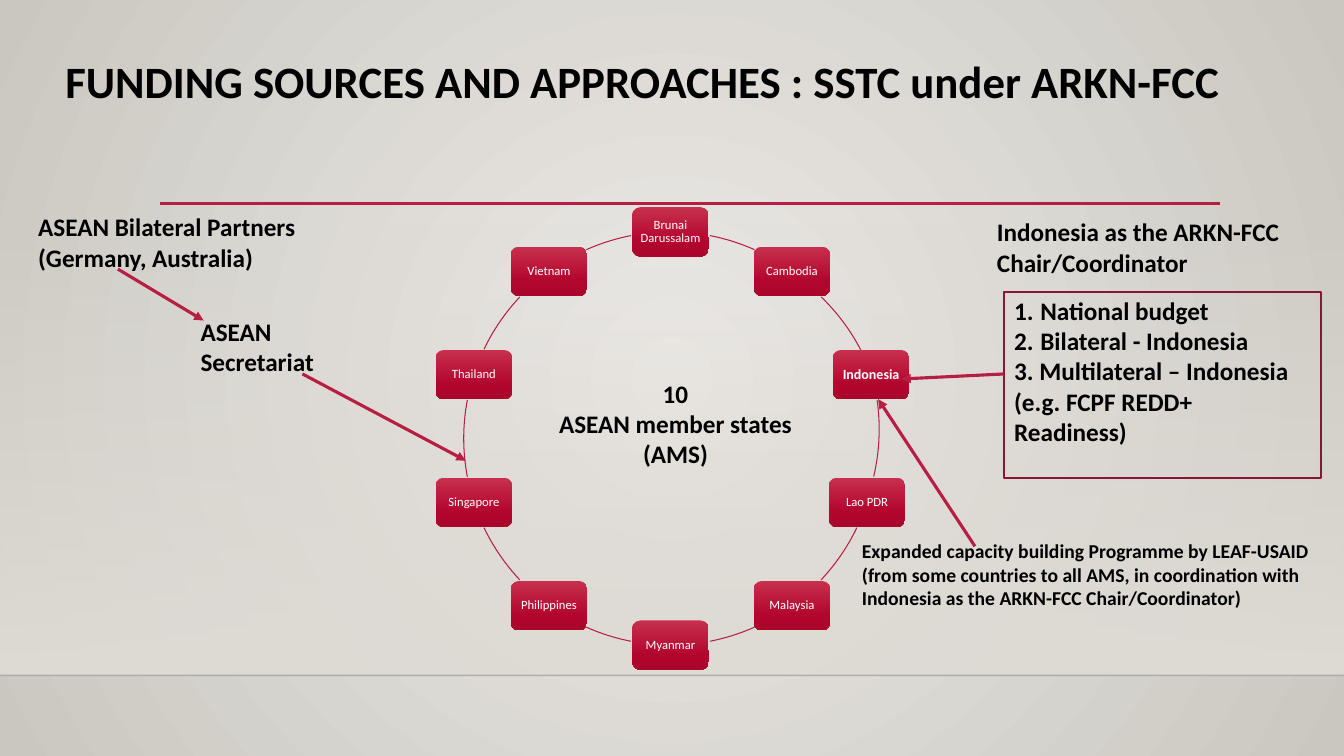
from dataclasses import dataclass
from math import cos, radians, sin
from typing import Optional

from lxml import etree
from pptx import Presentation
from pptx import util as u
from pptx.dml.color import RGBColor
from pptx.enum import shapes, text
from pptx.oxml.ns import qn


@dataclass(frozen=True)
class Theme:
    font: str = "Calibri"
    ink: str = "000000"
    white: str = "FFFFFF"
    accent: str = "B71E42"
    frame: str = "871631"
    floor_edge: str = "000001"
    backdrop: tuple = ((0, "ECEAE7", 100), (100, "CAC7C1", 100))
    floor: tuple = ((0, "DFDBD5", 0), (100, "DFDBD5", 100))
    node: tuple = ((0, "C7304C", 100), (69, "B3062F", 100), (100, "AA062C", 100))
    title: float = 32
    body: float = 18
    note: float = 14
    member: float = 9
    host: float = 10


@dataclass(frozen=True)
class Label:
    box: tuple
    lines: tuple
    size: float
    align: text.PP_ALIGN = text.PP_ALIGN.LEFT
    spacing: float = 1.0
    numbered: int = 0


@dataclass(frozen=True)
class Member:
    name: str
    arc: tuple
    arc_shift: tuple = (0, 0)
    shift: float = 0
    host: bool = False


@dataclass(frozen=True)
class Line:
    start: tuple
    end: tuple
    width: float = 2.25
    color: str = Theme.accent
    arrow: bool = True
    alpha: int = 100


THEME = Theme()
RING_CENTER = (6.65, 4.35)
RING_RADIUS = 2.05
NODE_SIZE = (0.76, 0.49)
LABEL_FRAME = dict(word_wrap=True, vertical_anchor=text.MSO_ANCHOR.TOP)
NODE_FRAME = dict(word_wrap=True, vertical_anchor=text.MSO_ANCHOR.MIDDLE,
                  **{f"margin_{side}": u.Inches(0.06)
                     for side in ("left", "top", "right", "bottom")})

MEMBERS = (
    Member("Brunai Darussalam", (11, 24)),
    Member("Cambodia", (44, 62.4), arc_shift=(0.07, 0.07)),
    Member("Indonesia", (81.9, 103.2), arc_shift=(0.02, -0.09), shift=0.04, host=True),
    Member("Lao PDR", (115.6, 133.2)),
    Member("Malaysia", (156, 169)),
    Member("Myanmar", (191, 204)),
    Member("Philippines", (226.8, 244.4)),
    Member("Singapore", (259.3, 280.7)),
    Member("Thailand", (295.6, 313.2)),
    Member("Vietnam", (336, 349)),
)
LABELS = (
    Label((0.55, 0.54, 11.84, 1.15),
          ("FUNDING SOURCES AND APPROACHES : SSTC under ARKN-FCC",),
          THEME.title, spacing=0.9),
    Label((5.18, 3.7, 3.04, 1.01), ("10", "ASEAN member states", "(AMS)"),
          THEME.body, text.PP_ALIGN.CENTER),
    Label((1.89, 3.09, 1.59, 0.71), ("ASEAN", "Secretariat"), THEME.body),
    Label((0.28, 2.05, 3.28, 0.71),
          ("ASEAN Bilateral Partners", "(Germany, Australia)"), THEME.body),
    Label((9.79, 2.1, 3.53, 0.71),
          ("Indonesia as the ARKN-FCC", "Chair/Coordinator"), THEME.body),
    Label((8.45, 5.3, 4.72, 1.04),
          ("Expanded capacity building Programme by LEAF-USAID (from some countries "
           "to all AMS, in coordination with Indonesia as the ARKN-FCC "
           "Chair/Coordinator)",), THEME.note),
)
BUDGET = Label((9.96, 2.88, 3.21, 1.66),
               ("National budget", "Bilateral - Indonesia",
                "3. Multilateral – Indonesia", "(e.g. FCPF REDD+", "Readiness)"),
               THEME.body, numbered=2)
RULES = (
    Line((0, 6.7), (13.33, 6.7), 1, THEME.floor_edge, arrow=False, alpha=20),
    Line((1.59, 2.02), (12.1, 2.02), 2.5, arrow=False),
)
ARROWS = (
    Line((1.17, 2.67), (2.02, 3.18)),
    Line((3, 3.71), (4.62, 4.57)),
    Line((9.67, 5.42), (8.71, 3.96)),
)
BUDGET_ARROW = Line((9.96, 3.71), (8.94, 3.76))


def inches(values: tuple) -> list:
    return [u.Inches(v) for v in values]


def set_all(target, values: dict) -> None:
    for name, value in values.items():
        setattr(target, name, value)


def add_xml(parent, tag: str, **attrs):
    return etree.SubElement(parent, qn(tag), {k: str(v) for k, v in attrs.items()})


def set_gradient(fill, holder, stops: tuple, radial: bool = False) -> None:
    fill.gradient()
    grad = next(holder.iter(qn("a:gradFill")))
    for child in list(grad):
        grad.remove(child)
    stop_list = add_xml(grad, "a:gsLst")
    for position, color, alpha in stops:
        stop = add_xml(stop_list, "a:gs", pos=position * 1000)
        clr = add_xml(stop, "a:srgbClr", val=color)
        if alpha < 100:
            add_xml(clr, "a:alpha", val=alpha * 1000)
    if radial:
        circle = add_xml(grad, "a:path", path="circle")
        add_xml(circle, "a:fillToRect", l=50000, t=50000, r=50000, b=50000)
    else:
        add_xml(grad, "a:lin", ang=5400000, scaled=0)


def write(p, content: str, size: float, color: str, bold: bool,
          align: text.PP_ALIGN, spacing: float) -> None:
    set_all(p, dict(alignment=align, line_spacing=spacing))
    r = p.add_run()
    r.text = content
    set_all(r.font, dict(name=THEME.font, size=u.Pt(size), bold=bold))
    r.font.color.rgb = RGBColor.from_string(color)


def add_shape(s, kind: shapes.MSO_SHAPE, box: tuple, line: Optional[str] = None,
              width: float = 1, stops: Optional[tuple] = None):
    sp = s.shapes.add_shape(kind, *inches(box))
    sp.shadow.inherit = False
    if stops:
        set_gradient(sp.fill, sp._element.spPr, stops)
    else:
        sp.fill.background()
    if line:
        sp.line.color.rgb = RGBColor.from_string(line)
        sp.line.width = u.Pt(width)
    else:
        sp.line.fill.background()
    return sp


def add_label(s, label: Label):
    sp = s.shapes.add_textbox(*inches(label.box))
    tf = sp.text_frame
    set_all(tf, LABEL_FRAME)
    for i, content in enumerate(label.lines):
        p = tf.add_paragraph() if i else tf.paragraphs[0]
        if i < label.numbered:
            ppr = p._p.get_or_add_pPr()
            set_all_indent = dict(marL=u.Inches(0.26), indent=u.Inches(-0.26))
            for name, value in set_all_indent.items():
                ppr.set(name, str(value))
            add_xml(ppr, "a:buFont", typeface="+mj-lt")
            add_xml(ppr, "a:buAutoNum", type="arabicPeriod")
        write(p, content, label.size, THEME.ink, True, label.align, label.spacing)
    return sp


def add_line(s, line: Line):
    cx = s.shapes.add_connector(shapes.MSO_CONNECTOR.STRAIGHT,
                                *inches(line.start + line.end))
    cx.line.color.rgb = RGBColor.from_string(line.color)
    cx.line.width = u.Pt(line.width)
    ln = cx.line._get_or_add_ln()
    if line.alpha < 100:
        add_xml(next(ln.iter(qn("a:srgbClr"))), "a:alpha", val=line.alpha * 1000)
    if line.arrow:
        add_xml(ln, "a:tailEnd", type="triangle")
    add_xml(cx._element.spPr, "a:effectLst")
    return cx


def add_member(s, index: int, member: Member) -> None:
    (cx, cy), (w, h) = RING_CENTER, NODE_SIZE
    angle = radians(index * 360 / len(MEMBERS))
    left = cx + RING_RADIUS * sin(angle) - w / 2 + member.shift
    top = cy - RING_RADIUS * cos(angle) - h / 2
    sp = add_shape(s, shapes.MSO_SHAPE.ROUNDED_RECTANGLE, (left, top, w, h),
                   stops=THEME.node)
    set_all(sp.text_frame, NODE_FRAME)
    size = THEME.host if member.host else THEME.member
    write(sp.text_frame.paragraphs[0], member.name, size, THEME.white, member.host,
          text.PP_ALIGN.CENTER, 0.9)
    dx, dy = member.arc_shift
    arc = add_shape(s, shapes.MSO_SHAPE.ARC,
                    (cx - RING_RADIUS + dx, cy - RING_RADIUS + dy,
                     2 * RING_RADIUS, 2 * RING_RADIUS), THEME.accent, 0.75)
    for i, bearing in enumerate(member.arc):
        arc.adjustments[i] = (bearing - 90) % 360 * 0.6


def main() -> None:
    prs = Presentation()
    prs.slide_width, prs.slide_height = inches((13.33, 7.5))
    s = prs.slides.add_slide(prs.slide_layouts[6])
    set_gradient(s.background.fill, s._element, THEME.backdrop, radial=True)
    add_shape(s, shapes.MSO_SHAPE.RECTANGLE, (0, 2.21, 13.33, 4.49), stops=THEME.floor)
    for rule in RULES:
        add_line(s, rule)
    for index, member in enumerate(MEMBERS):
        add_member(s, index, member)
    for label in LABELS:
        add_label(s, label)
    for arrow in ARROWS:
        add_line(s, arrow)
    add_shape(s, shapes.MSO_SHAPE.RECTANGLE, (9.96, 2.9, 3.14, 1.84), THEME.frame, 1.5)
    budget = add_label(s, BUDGET)
    add_line(s, BUDGET_ARROW).begin_connect(budget, 1)
    prs.save("out.pptx")


if __name__ == "__main__":
    main()
